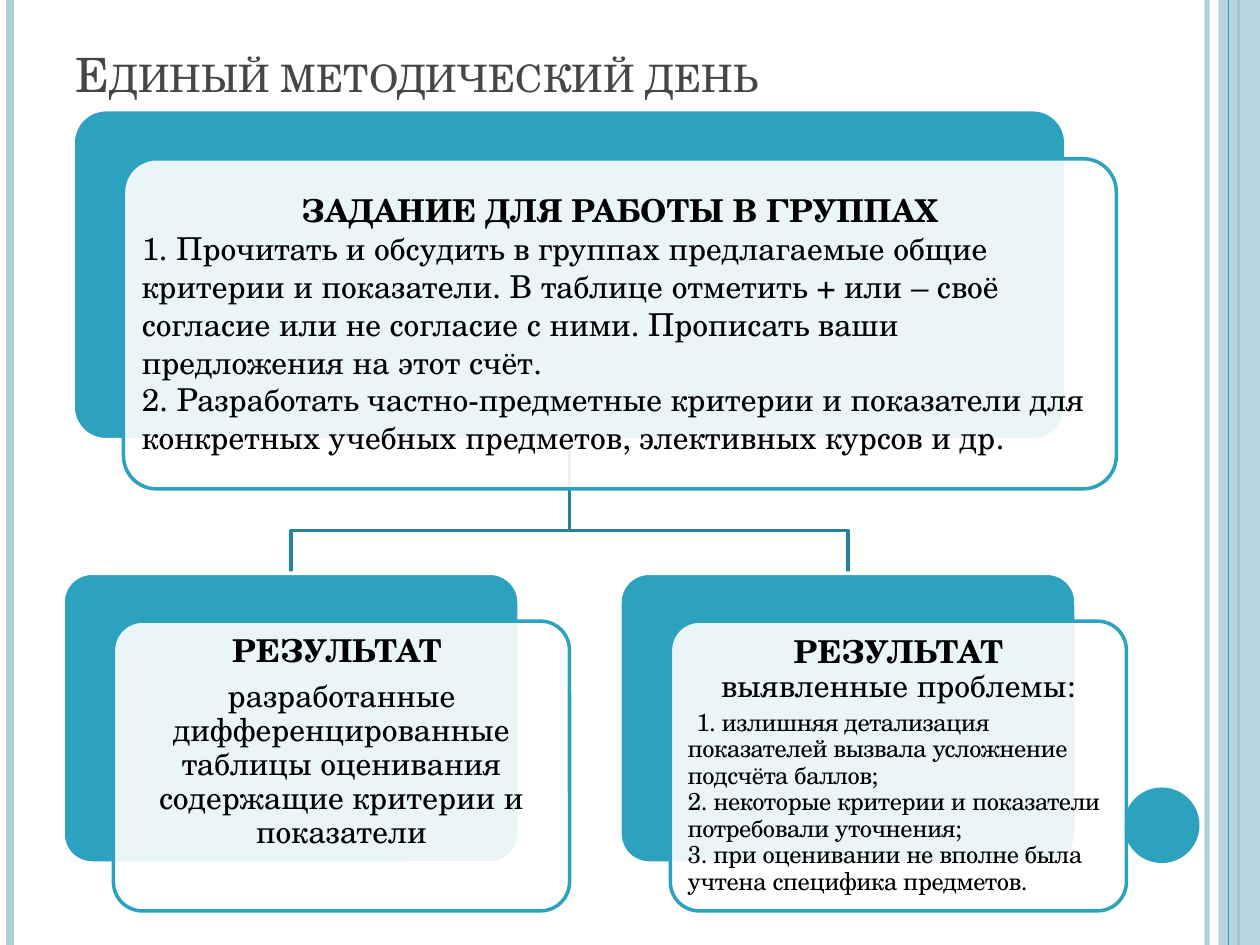
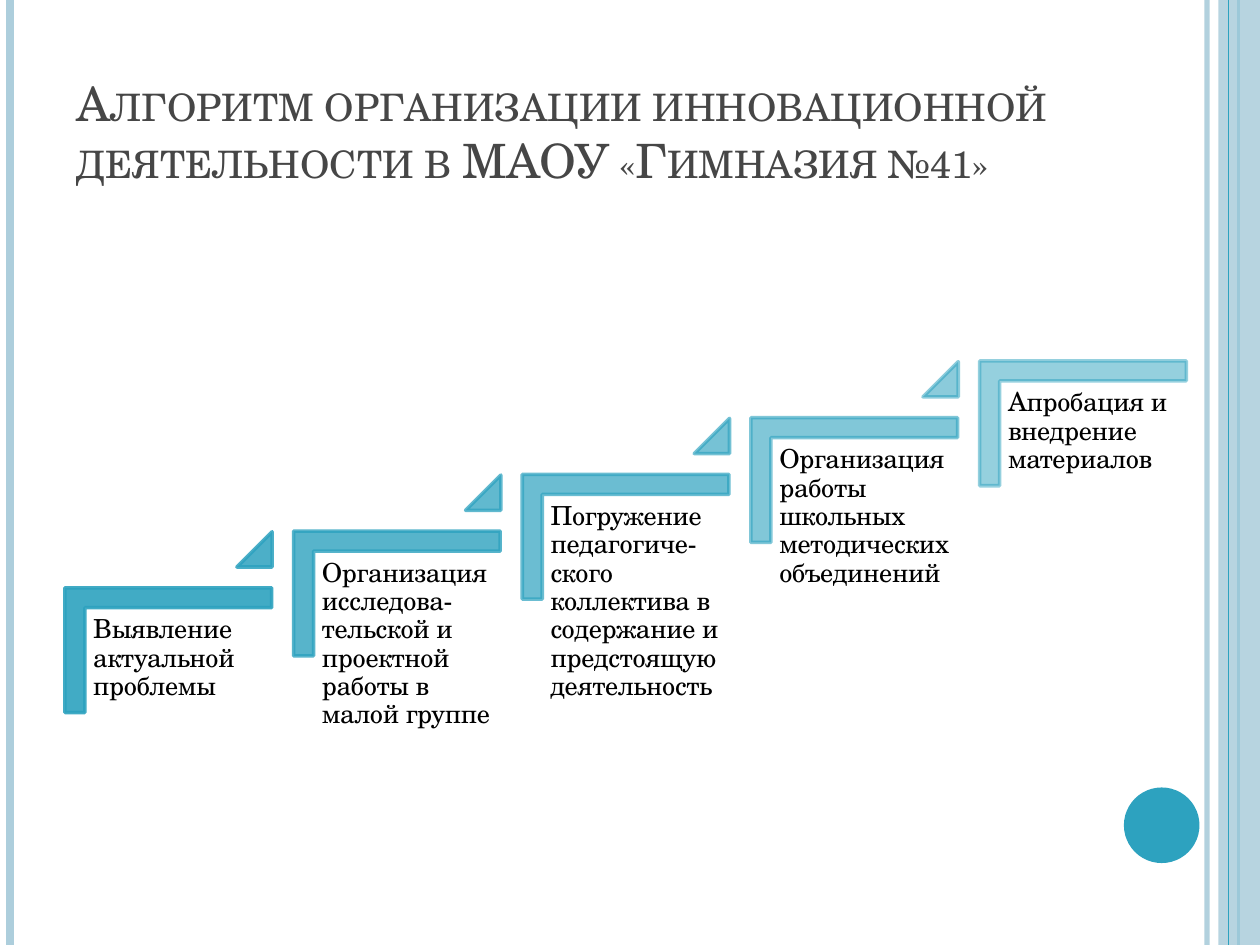
from dataclasses import dataclass

from lxml import etree
from pptx import Presentation
from pptx.dml.color import RGBColor
from pptx.enum.shapes import MSO_CONNECTOR, MSO_SHAPE
from pptx.enum.text import MSO_ANCHOR, MSO_AUTO_SIZE, PP_ALIGN
from pptx.oxml.ns import qn
from pptx.util import Inches, Pt

TEAL = RGBColor(0x2D, 0xA2, 0xBF)
DARK_TEAL = RGBColor(0x24, 0x82, 0x99)
PALE = RGBColor(0xAD, 0xCE, 0xDC)
GREY = RGBColor(0x46, 0x46, 0x46)
BLACK = RGBColor(0, 0, 0)
WHITE = RGBColor(0xFF, 0xFF, 0xFF)
FONT = "TeX Gyre Schola"

STRAIGHT = MSO_CONNECTOR.STRAIGHT
RECT, OVAL = MSO_SHAPE.RECTANGLE, MSO_SHAPE.OVAL
ROUNDED, TRIANGLE = MSO_SHAPE.ROUNDED_RECTANGLE, MSO_SHAPE.ISOSCELES_TRIANGLE
CORNER = MSO_SHAPE.CORNER
LEFT, CENTER = PP_ALIGN.LEFT, PP_ALIGN.CENTER
TOP, MIDDLE, BOTTOM = MSO_ANCHOR.TOP, MSO_ANCHOR.MIDDLE, MSO_ANCHOR.BOTTOM
NO_FIT = MSO_AUTO_SIZE.NONE

SLIDE_W, SLIDE_H = 10, 7.5
TITLE_W = 8.17
TITLE_ONLY = 5

# Paired cards: a teal back and a front shifted down and right
BIG_CARD = (7.88, 2.62)
BIG_SHIFT = (0.4, 0.39)
SMALL_CARD = (3.62, 2.3)
SMALL_SHIFT = (0.4, 0.38)
BIG_LEFT, BIG_TOP = 0.58, 0.87
SMALL_LEFTS, SMALL_TOP = (0.5, 4.92), 4.55
FORK_Y = 4.21

# Staircase
FIRST_X, LAST_X = 0.84, 8.1
FIRST_Y, STEP_Y = 4.34, -0.45
CORNER_W, CORNER_H = 0.99, 1.64
STEPS = [
    "Выявление актуальной проблемы",
    "Организация исследова-тельской и проектной работы в малой группе",
    "Погружение педагогиче-ского коллектива в содержание и предстоящую деятельность",
    "Организация работы школьных методических объединений",
    "Апробация и внедрение материалов",
]
STEP_X = (LAST_X - FIRST_X) / (len(STEPS) - 1)


@dataclass
class Para:
    text: str
    align: PP_ALIGN = LEFT
    size: float = 18
    bold: bool = False
    color: RGBColor = BLACK
    tracking: int = 0
    spacing: float = 1
    before: float = 0
    after: float = 0
    indent: float = 0
    small_caps: bool = False


TASK = [
    Para("ЗАДАНИЕ ДЛЯ РАБОТЫ В ГРУППАХ", CENTER, bold=True),
    Para("1. Прочитать и обсудить в группах предлагаемые общие критерии и "
         "показатели. В таблице отметить + или – своё согласие или не согласие "
         "с ними. Прописать ваши предложения на этот счёт."),
    Para("2. Разработать частно-предметные критерии и показатели для "
         "конкретных учебных предметов, элективных курсов и др."),
]
TABLES_RESULT = [
    Para("РЕЗУЛЬТАТ ", CENTER, bold=True, spacing=0.9, after=6.3),
    Para("разработанные дифференцированные таблицы оценивания содержащие "
         "критерии и показатели", CENTER, spacing=0.9),
]
PROBLEM = {"size": 14, "tracking": -30, "spacing": 0.9}
PROBLEMS_RESULT = [
    Para("РЕЗУЛЬТАТ", CENTER, bold=True, spacing=0.9),
    Para("выявленные проблемы:", CENTER, spacing=0.9),
    Para("1. излишняя детализация показателей вызвала усложнение подсчёта "
         "баллов;", before=3, indent=0.07, **PROBLEM),
    Para("2. некоторые критерии и показатели потребовали уточнения;", **PROBLEM),
    Para("3. при оценивании не вполне была учтена специфика предметов.", **PROBLEM),
]


def set_alpha(shape, percent):
    """Make every colour set so far on the shape see-through."""
    for clr in shape.element.iter(qn("a:srgbClr")):
        etree.SubElement(clr, qn("a:alpha")).set("val", str(percent * 1000))


def add_shape(slide, kind, x, y, w, h, fill, alpha=100):
    sp = slide.shapes.add_shape(kind, Inches(x), Inches(y), Inches(w), Inches(h))
    sp.shadow.inherit = False
    sp.fill.solid()
    sp.fill.fore_color.rgb = fill
    sp.line.fill.background()
    if alpha < 100:
        set_alpha(sp, alpha)
    return sp


def outline(shape, color, width=2):
    shape.line.color.rgb = color
    shape.line.width = Pt(width)


def add_vertical(slide, x, color, width, alpha=100):
    line = slide.shapes.add_connector(
        STRAIGHT, Inches(x), 0, Inches(x), Inches(SLIDE_H))
    outline(line, color, width)
    etree.SubElement(line.element.spPr, qn("a:effectLst"))
    if alpha < 100:
        set_alpha(line, alpha)


def write(tf, paras, anchor, inset, bottom=None):
    tf.word_wrap = True
    tf.auto_size = NO_FIT
    tf.vertical_anchor = anchor
    tf.margin_left = tf.margin_right = tf.margin_top = Inches(inset)
    tf.margin_bottom = Inches(inset if bottom is None else bottom)
    for i, para in enumerate(paras):
        p = tf.add_paragraph() if i else tf.paragraphs[0]
        p.alignment = para.align
        p.line_spacing = para.spacing
        p.space_before, p.space_after = Pt(para.before), Pt(para.after)
        if para.indent:
            p._p.get_or_add_pPr().set("indent", str(Inches(para.indent)))
        r = p.add_run()
        r.text = para.text
        r.font.name, r.font.size = FONT, Pt(para.size)
        r.font.bold, r.font.color.rgb = para.bold, para.color
        rPr = r._r.get_or_add_rPr()
        if para.tracking:
            rPr.set("spc", str(para.tracking))
        if para.small_caps:
            rPr.set("cap", "small")


def add_themed_slide(prs, title, x, y, h):
    """Add a slide with the side bands, the disc and a title."""
    slide = prs.slides.add_slide(prs.slide_layouts[TITLE_ONLY])
    add_vertical(slide, 9.58, PALE, 3, 93)
    add_vertical(slide, 0.08, PALE, 4.5)
    add_vertical(slide, 9.83, TEAL, 1.5)
    add_shape(slide, RECT, 9.67, 0, SLIDE_W - 9.67, SLIDE_H, PALE, 87)
    add_vertical(slide, 9.75, TEAL, 0.75)
    add_shape(slide, OVAL, 8.92, 6.25, 0.6, 0.6, TEAL)
    sp = slide.shapes.title
    sp.left, sp.top = Inches(x), Inches(y)
    sp.width, sp.height = Inches(TITLE_W), Inches(h)
    write(sp.text_frame, [Para(title, size=27, color=GREY, small_caps=True)],
          BOTTOM, 0.1, 0.05)
    return slide


def add_card(slide, x, y, size, shift, paras, bottom=0.07):
    back = add_shape(slide, ROUNDED, x, y, *size, TEAL)
    outline(back, WHITE)
    front = add_shape(slide, ROUNDED, x + shift[0], y + shift[1], *size, WHITE, 90)
    outline(front, TEAL)
    for sp in (back, front):
        sp.adjustments[0] = 0.1
    write(front.text_frame, paras, MIDDLE, 0.07, bottom)


def add_branch(slide, start, end):
    """Draw a stepped line that turns at the fork level."""
    points = [start, (start[0], FORK_Y), (end[0], FORK_Y), end]
    emu = [(Inches(x), Inches(y)) for x, y in points]
    builder = slide.shapes.build_freeform(*emu[0], scale=1.0)
    builder.add_line_segments(emu[1:], close=False)
    sp = builder.convert_to_shape()
    sp.shadow.inherit = False
    sp.fill.background()
    outline(sp, DARK_TEAL)


def add_step(slide, index, text):
    x, y = FIRST_X + index * STEP_X, FIRST_Y + index * STEP_Y
    alpha = 90 - 10 * index
    corner = add_shape(slide, CORNER, x, y, CORNER_W, CORNER_H, TEAL)
    corner.rotation = 90
    for i in range(2):
        corner.adjustments[i] = 0.16
    outline(corner, TEAL)
    set_alpha(corner, alpha)
    box = slide.shapes.add_textbox(
        Inches(x - 0.16), Inches(y + 0.49), Inches(1.48), Inches(1.3))
    write(box.text_frame, [Para(text, size=15, tracking=-20, spacing=0.9)], TOP, 0.06)
    if index < len(STEPS) - 1:
        rise = add_shape(slide, TRIANGLE, x + 1.04, y - 0.12, 0.28, 0.28, TEAL)
        rise.adjustments[0] = 1
        outline(rise, TEAL)
        set_alpha(rise, alpha - 5)


def build_methodical_day(prs):
    slide = add_themed_slide(prs, "Единый методический день", 0.5, 0.3, 0.56)
    trunk = (BIG_LEFT + BIG_CARD[0] / 2, BIG_TOP + BIG_CARD[1])
    for x in reversed(SMALL_LEFTS):
        add_branch(slide, trunk, (x + SMALL_CARD[0] / 2, SMALL_TOP))
    add_card(slide, BIG_LEFT, BIG_TOP, BIG_CARD, BIG_SHIFT, TASK)
    results = [(TABLES_RESULT, 0.44), (PROBLEMS_RESULT, 0.07)]
    for x, (paras, bottom) in zip(SMALL_LEFTS, results):
        add_card(slide, x, SMALL_TOP, SMALL_CARD, SMALL_SHIFT, paras, bottom)


def build_algorithm(prs):
    slide = add_themed_slide(
        prs, "Алгоритм организации инновационной деятельности в МАОУ «Гимназия №41»",
        0.51, 0.36, 1.18)
    for index, text in enumerate(STEPS):
        add_step(slide, index, text)


def main():
    prs = Presentation()
    prs.slide_width, prs.slide_height = Inches(SLIDE_W), Inches(SLIDE_H)
    build_methodical_day(prs)
    build_algorithm(prs)
    prs.save("out.pptx")


if __name__ == "__main__":
    main()
